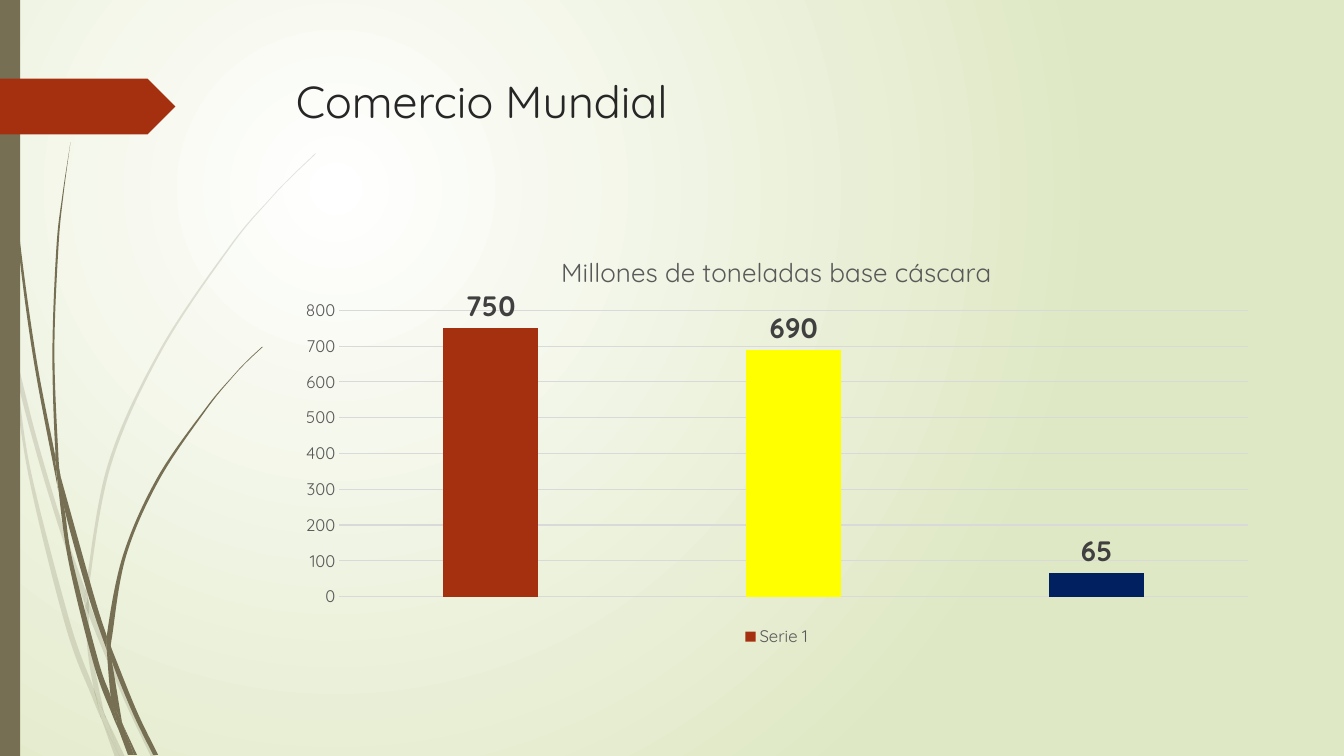
from lxml import etree
from pptx import Presentation
from pptx.chart.data import CategoryChartData
from pptx.dml.color import RGBColor
from pptx.enum.chart import XL_CHART_TYPE, XL_LABEL_POSITION, XL_LEGEND_POSITION, XL_TICK_MARK
from pptx.enum.shapes import MSO_SHAPE
from pptx.oxml.ns import qn
from pptx.util import Cm, Pt

COLUMNS = XL_CHART_TYPE.COLUMN_CLUSTERED
OUTSIDE_END = XL_LABEL_POSITION.OUTSIDE_END
BOTTOM = XL_LEGEND_POSITION.BOTTOM
NO_TICK = XL_TICK_MARK.NONE
RECTANGLE = MSO_SHAPE.RECTANGLE
ARROW = MSO_SHAPE.PENTAGON

WHITE = RGBColor(0xFF, 0xFF, 0xFF)
PALE_GREEN = RGBColor(0xDF, 0xE8, 0xC4)
OLIVE = RGBColor(0x76, 0x6F, 0x54)
RUST = RGBColor(0xA5, 0x30, 0x10)
YELLOW = RGBColor(0xFF, 0xFF, 0x00)
NAVY = RGBColor(0x00, 0x20, 0x60)
TITLE_INK = RGBColor(0x26, 0x26, 0x26)
LABEL_INK = RGBColor(0x40, 0x40, 0x40)
GREY = RGBColor(0x59, 0x59, 0x59)
LIGHT_GREY = RGBColor(0xD9, 0xD9, 0xD9)
FONT = "Quicksand"

BLADE_UNIT = Cm(2.54) / 100

# Each blade piece: its two edges, both from top to bottom, in blade units
FAINT_PIECES = [
    ([(0, 282), (9, 322), (11, 350)], [(0, 299), (10, 344), (11, 350)]),
    ([(14, 345), (36, 433), (62, 520), (85, 586)],
     [(14, 345), (17, 376), (36, 449), (58, 522), (84, 599)]),
    ([(88, 596), (92, 607), (127, 692), (155, 751)],
     [(88, 596), (88, 610), (123, 694), (150, 751)]),
    ([(105, 711), (124, 751)], [(105, 711), (119, 751)]),
    ([(11, 350), (17, 376), (31, 469), (70, 619), (93, 683), (99, 707), (101, 714)],
     [(11, 350), (28, 470), (65, 621), (92, 693), (101, 714)]),
    ([(84, 599), (88, 608), (88, 610), (91, 646), (103, 706), (105, 711)],
     [(84, 599), (87, 646), (93, 683), (96, 692), (105, 711)]),
    ([(312, 153), (312, 154), (290, 175), (268, 198), (229, 245), (160, 349), (110, 462),
      (88, 584), (88, 596)],
     [(312, 153), (289, 175), (268, 197), (228, 244), (158, 348), (107, 461), (85, 584),
      (85, 586), (88, 596)]),
    ([(101, 714), (119, 751)], [(101, 714), (114, 751)]),
    ([(85, 586), (88, 596), (88, 610)], [(85, 586), (84, 599), (88, 608)]),
    ([(93, 683), (96, 692), (105, 711), (119, 751)],
     [(93, 683), (99, 707), (101, 714), (119, 751)]),
]
STRONG_PIECES = [
    ([(4, 0), (4, 0), (5, 48), (8, 109), (19, 232), (36, 355), (55, 453), (55, 457), (57, 481)],
     [(3, 0), (4, 48), (7, 110), (17, 233), (33, 355), (56, 477), (57, 481)]),
    ([(60, 472), (93, 590), (106, 631), (106, 633), (106, 645)],
     [(60, 472), (64, 505), (88, 592), (106, 645)]),
    ([(110, 641), (113, 649), (136, 706), (157, 749)],
     [(110, 641), (111, 656), (132, 708), (152, 749)]),
    ([(57, 477), (64, 505), (72, 556), (98, 657), (110, 691), (116, 717), (117, 722)],
     [(57, 477), (68, 557), (93, 659), (111, 708), (117, 722)]),
    ([(70, 141), (63, 193), (58, 245), (54, 349), (58, 453), (60, 472)],
     [(70, 141), (62, 193), (56, 245), (52, 349), (55, 449), (60, 472)]),
    ([(122, 719), (136, 749)], [(122, 719), (133, 749)]),
    ([(55, 449), (60, 472), (64, 505)], [(55, 449), (55, 453), (57, 477), (64, 505)]),
    ([(261, 344), (245, 359), (231, 374), (205, 406), (158, 476), (125, 552), (111, 633),
      (110, 641)],
     [(260, 344), (245, 358), (231, 373), (204, 405), (156, 474), (122, 551), (106, 631),
      (110, 641)]),
    ([(117, 722), (131, 749)], [(117, 722), (127, 749)]),
    ([(106, 645), (109, 651), (111, 656), (121, 716), (122, 719)],
     [(106, 645), (110, 691), (116, 706), (122, 719)]),
    ([(106, 631), (110, 641), (111, 656)], [(106, 631), (106, 645), (109, 651), (111, 656)]),
    ([(110, 691), (116, 706), (122, 719), (133, 749)],
     [(110, 691), (116, 717), (117, 722), (130, 749)]),
]


def smooth_edge(knots):
    """Return the first knot, then two control points and a knot per curve, in EMU."""
    padded = [knots[0], *knots, knots[-1]]
    points = [knots[0]]
    for a, b, c, d in zip(padded, padded[1:], padded[2:], padded[3:]):
        points.append(tuple(q + (r - p) / 6 for p, q, r in zip(a, b, c)))
        points.append(tuple(r - (s - q) / 6 for q, r, s in zip(b, c, d)))
        points.append(c)
    return [(x * BLADE_UNIT, y * BLADE_UNIT) for x, y in points]


def write_text(text_frame, text, size, color, bold=False):
    paragraph = text_frame.paragraphs[0]
    run = paragraph.add_run()
    run.text = text
    run.font.name = FONT
    run.font.size = Pt(size)
    run.font.bold = bold
    run.font.color.rgb = color


presentation = Presentation()
presentation.slide_width = Cm(33.87)
presentation.slide_height = Cm(19.05)
slide = presentation.slides.add_slide(presentation.slide_layouts[6])

# Background: radial glow centred on the upper left quarter
background = slide.background.fill
background.gradient()
for stop, color in zip(background.gradient_stops, (WHITE, PALE_GREEN)):
    stop.color.rgb = color
gradient = next(slide.background._cSld.iter(qn("a:gradFill")))
gradient.remove(gradient.find(qn("a:lin")))
circle = etree.SubElement(gradient, qn("a:path"), path="circle")
etree.SubElement(circle, qn("a:fillToRect"), l="50000", t="50000", r="100000", b="100000")

# Grass blades: each edge's points become Bezier curves
for opacity, pieces in ((20, FAINT_PIECES), (100, STRONG_PIECES)):
    for first_edge, second_edge in pieces:
        first_curve = smooth_edge(first_edge)
        outline = first_curve + smooth_edge(second_edge)[::-1]
        builder = slide.shapes.build_freeform(*outline[0])
        builder.add_line_segments(outline[1:], close=True)
        blade = builder.convert_to_shape()
        blade.shadow.inherit = False
        blade.fill.solid()
        blade.fill.fore_color.rgb = OLIVE
        blade.line.fill.background()
        properties = blade._element.spPr
        lines = list(properties.iter(qn("a:lnTo")))
        turn = len(first_curve) - 1
        curved_lines = lines[:turn] + lines[turn + 1:]
        for start in range(0, len(curved_lines), 3):
            curve = etree.Element(qn("a:cubicBezTo"))
            curved_lines[start].addprevious(curve)
            for line in curved_lines[start:start + 3]:
                curve.append(line[0])
                line.getparent().remove(line)
        if opacity < 100:
            color_element = next(properties.iter(qn("a:srgbClr")))
            etree.SubElement(color_element, qn("a:alpha"), val=str(opacity * 1000))

# Side bar and arrow tab
for preset, top, width, height, color in (
    (RECTANGLE, 0, 0.51, 19.05, OLIVE),
    (ARROW, 1.98, 4.42, 1.41, RUST),
):
    shape = slide.shapes.add_shape(preset, 0, Cm(top), Cm(width), Cm(height))
    shape.shadow.inherit = False
    shape.fill.solid()
    shape.fill.fore_color.rgb = color
    shape.line.fill.background()

title = slide.shapes.add_textbox(Cm(7.21), Cm(1.73), Cm(24.77), Cm(3.56))
title.text_frame.word_wrap = True
write_text(title.text_frame, "Comercio Mundial", size=32, color=TITLE_INK)

# Column chart
chart_data = CategoryChartData()
chart_data.categories = ["1", "2", "3"]
chart_data.add_series("Serie 1", (750, 690, 65))
chart = slide.shapes.add_chart(
    COLUMNS, Cm(7.19), Cm(5.92), Cm(24.77), Cm(10.49), chart_data).chart
chart.font.name = FONT
chart.font.size = Pt(12)
chart.font.color.rgb = GREY
chart.has_title = True
write_text(chart.chart_title.text_frame, "Millones de toneladas base cáscara", 18.6, GREY)
chart.has_legend = True
chart.legend.position = BOTTOM
chart.legend.include_in_layout = False

plot_area = next(chart._chartSpace.iter(qn("c:plotArea")))
for old_layout in plot_area.findall(qn("c:layout")):
    plot_area.remove(old_layout)
layout = etree.Element(qn("c:layout"))
plot_area.insert(0, layout)
manual = etree.SubElement(layout, qn("c:manualLayout"))
for name, value in (("layoutTarget", "inner"), ("xMode", "edge"), ("yMode", "edge"),
                    ("x", "0.055"), ("y", "0.181"), ("w", "0.925"), ("h", "0.688")):
    etree.SubElement(manual, qn(f"c:{name}"), val=value)

chart.category_axis.visible = False
value_axis = chart.value_axis
value_axis.major_tick_mark = NO_TICK
value_axis.format.line.fill.background()
value_axis.major_gridlines.format.line.color.rgb = LIGHT_GREY
value_axis.major_gridlines.format.line.width = Pt(0.75)

plot = chart.plots[0]
plot.vary_by_categories = False
plot.gap_width = 219
plot.overlap = -27
series = plot.series[0]
for element, color in ((series, RUST), (series.points[1], YELLOW), (series.points[2], NAVY)):
    element.format.fill.solid()
    element.format.fill.fore_color.rgb = color
labels = series.data_labels
labels.show_value = True
labels.position = OUTSIDE_END
labels.font.name = FONT
labels.font.size = Pt(20)
labels.font.bold = True
labels.font.color.rgb = LABEL_INK

presentation.save("out.pptx")
